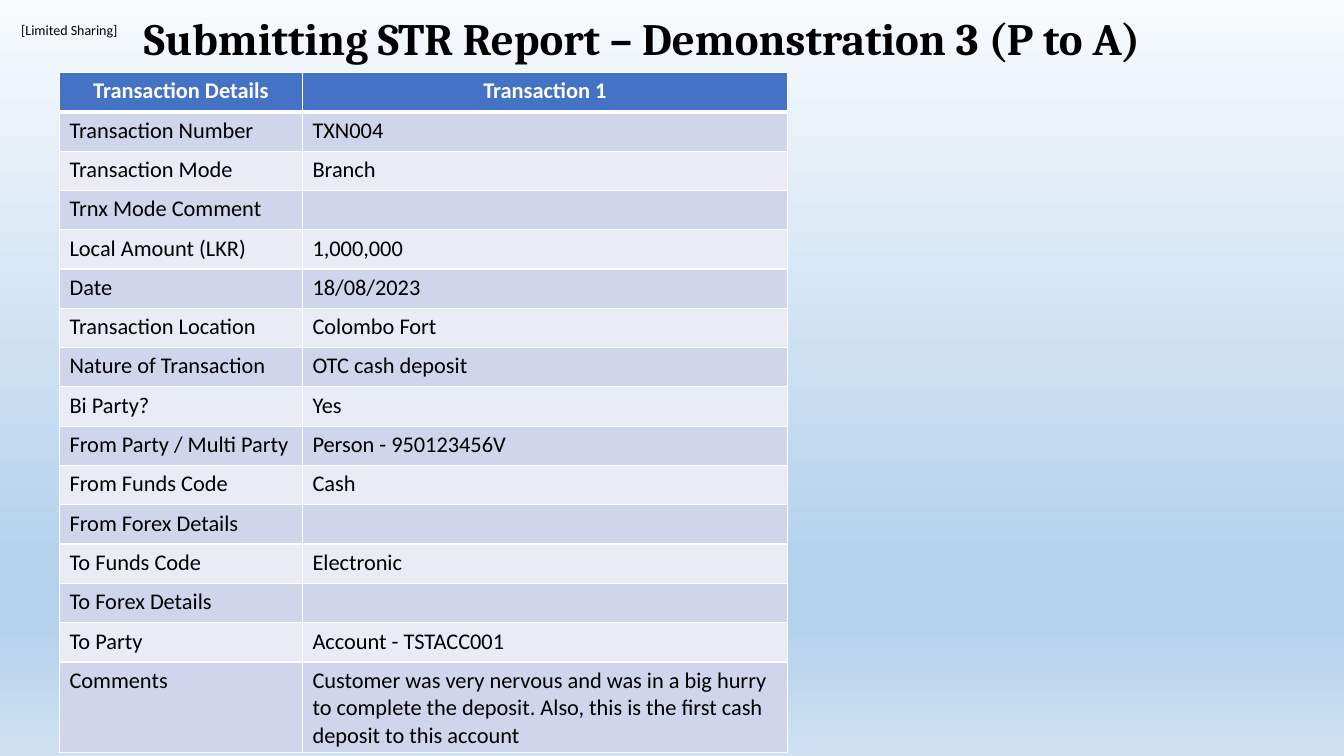
import pptx
import pptx.dml.color
import pptx.enum.text
import pptx.oxml
import pptx.oxml.ns
import pptx.util
from pptx.util import Inches, Pt

COLORS = {
    "text": "000000",
    "header_text": "FFFFFF",
    "header": "4472C4",
    "odd_row": "CFD5EA",
    "even_row": "E9EBF5",
    "border": "FFFFFF",
}
BACKGROUND_STOPS = [(0, "F7FAFD"), (74, "B5D2EC"), (83, "B5D2EC"), (100, "CEE1F2")]
FORMATS = {
    "marking": {"size": Pt(10), "name": "Calibri", "bold": False},
    "title": {"size": Pt(32), "name": "Cambria", "bold": True},
    "header": {"size": Pt(16), "name": "Calibri", "bold": True},
    "body": {"size": Pt(16), "name": "Calibri", "bold": False},
}
TRANSACTION = [
    ("Transaction Details", "Transaction 1"),
    ("Transaction Number", "TXN004"),
    ("Transaction Mode", "Branch"),
    ("Trnx Mode Comment", ""),
    ("Local Amount (LKR)", "1,000,000"),
    ("Date", "18/08/2023"),
    ("Transaction Location", "Colombo Fort"),
    ("Nature of Transaction", "OTC cash deposit"),
    ("Bi Party?", "Yes"),
    ("From Party / Multi Party", "Person - 950123456V"),
    ("From Funds Code", "Cash"),
    ("From Forex Details", ""),
    ("To Funds Code", "Electronic"),
    ("To Forex Details", ""),
    ("To Party", "Account - TSTACC001"),
    ("Comments", "Customer was very nervous and was in a big hurry to complete the "
                 "deposit. Also, this is the first cash deposit to this account"),
]
COLUMN_WIDTHS = [2.41, 4.81]
ROW_HEIGHT = 0.39
COMMENTS_HEIGHT = 0.87


def rgb(color):
    return pptx.dml.color.RGBColor.from_string(COLORS[color])


def write(paragraph, text, style, color="text"):
    """Add text in a named format; an empty paragraph keeps the format's size."""
    if not text:
        end = paragraph._p.get_or_add_endParaRPr()
        end.set("sz", str(FORMATS[style]["size"].centipoints))
        return
    run = paragraph.add_run()
    run.text = text
    for attribute, value in FORMATS[style].items():
        setattr(run.font, attribute, value)
    run.font.color.rgb = rgb(color)


def paint_background(slide):
    fill = slide.background.fill
    fill.gradient()
    fill.gradient_angle = 270
    stops = slide._element.find(".//" + pptx.oxml.ns.qn("a:gsLst"))
    for stop in list(stops):
        stops.remove(stop)
    for percent, color in BACKGROUND_STOPS:
        stops.append(pptx.oxml.parse_xml(
            f'<a:gs {pptx.oxml.ns.nsdecls("a")} pos="{percent * 1000}">'
            f'<a:srgbClr val="{color}"/></a:gs>'))


def add_marking(slide, left, top, width, height):
    frame = slide.shapes.add_textbox(left, top, width, height).text_frame
    frame.margin_left = frame.margin_top = frame.margin_right = frame.margin_bottom = 0
    write(frame.paragraphs[0], "[Limited Sharing]", "marking")


def add_title(slide, left, top, width, height):
    frame = slide.shapes.add_textbox(left, top, width, height).text_frame
    frame.word_wrap = True
    frame.vertical_anchor = pptx.enum.text.MSO_ANCHOR.MIDDLE
    frame.paragraphs[0].line_spacing = 0.9
    write(frame.paragraphs[0], "Submitting STR Report – Demonstration 3 (P to A)", "title")


def add_borders(cell, widths):
    """Draw the cell's sides, given as a dict of side letter to points."""
    properties = cell._tc.get_or_add_tcPr()
    for side, points in widths.items():
        properties.append(pptx.oxml.parse_xml(
            f'<a:ln{side} {pptx.oxml.ns.nsdecls("a")} w="{Pt(points)}">'
            f'<a:solidFill><a:srgbClr val="{COLORS["border"]}"/></a:solidFill></a:ln{side}>'))


def add_transaction_table(slide, left, top, width, height):
    table = slide.shapes.add_table(
        len(TRANSACTION), len(COLUMN_WIDTHS), left, top, width, height).table
    for column, column_width in zip(table.columns, COLUMN_WIDTHS):
        column.width = Inches(column_width)
    for row in table.rows:
        row.height = Inches(ROW_HEIGHT)
    table.rows[len(TRANSACTION) - 1].height = Inches(COMMENTS_HEIGHT)

    for row_index, entries in enumerate(TRANSACTION):
        is_header = row_index == 0
        band = "header" if is_header else "odd_row" if row_index % 2 else "even_row"
        for column_index, entry in enumerate(entries):
            cell = table.cell(row_index, column_index)
            paragraph = cell.text_frame.paragraphs[0]
            if is_header:
                paragraph.alignment = pptx.enum.text.PP_ALIGN.CENTER
                write(paragraph, entry, "header", "header_text")
            else:
                write(paragraph, entry, "body")
            add_borders(cell, {"L": 1, "R": 1, "T": 3 if row_index == 1 else 1,
                               "B": 3 if is_header else 1})
            cell.fill.solid()
            cell.fill.fore_color.rgb = rgb(band)


def main():
    presentation = pptx.Presentation()
    presentation.slide_width = Inches(13.33)
    presentation.slide_height = Inches(7.5)
    slide = presentation.slides.add_slide(presentation.slide_layouts[6])
    paint_background(slide)
    add_marking(slide, Inches(0.21), Inches(0.21), Inches(0.99), Inches(0.17))
    add_title(slide, Inches(1.33), Inches(0.06), Inches(11.5), Inches(0.7))
    add_transaction_table(slide, Inches(0.59), Inches(0.72), Inches(7.22), Inches(6.72))
    presentation.save("out.pptx")


if __name__ == "__main__":
    main()
